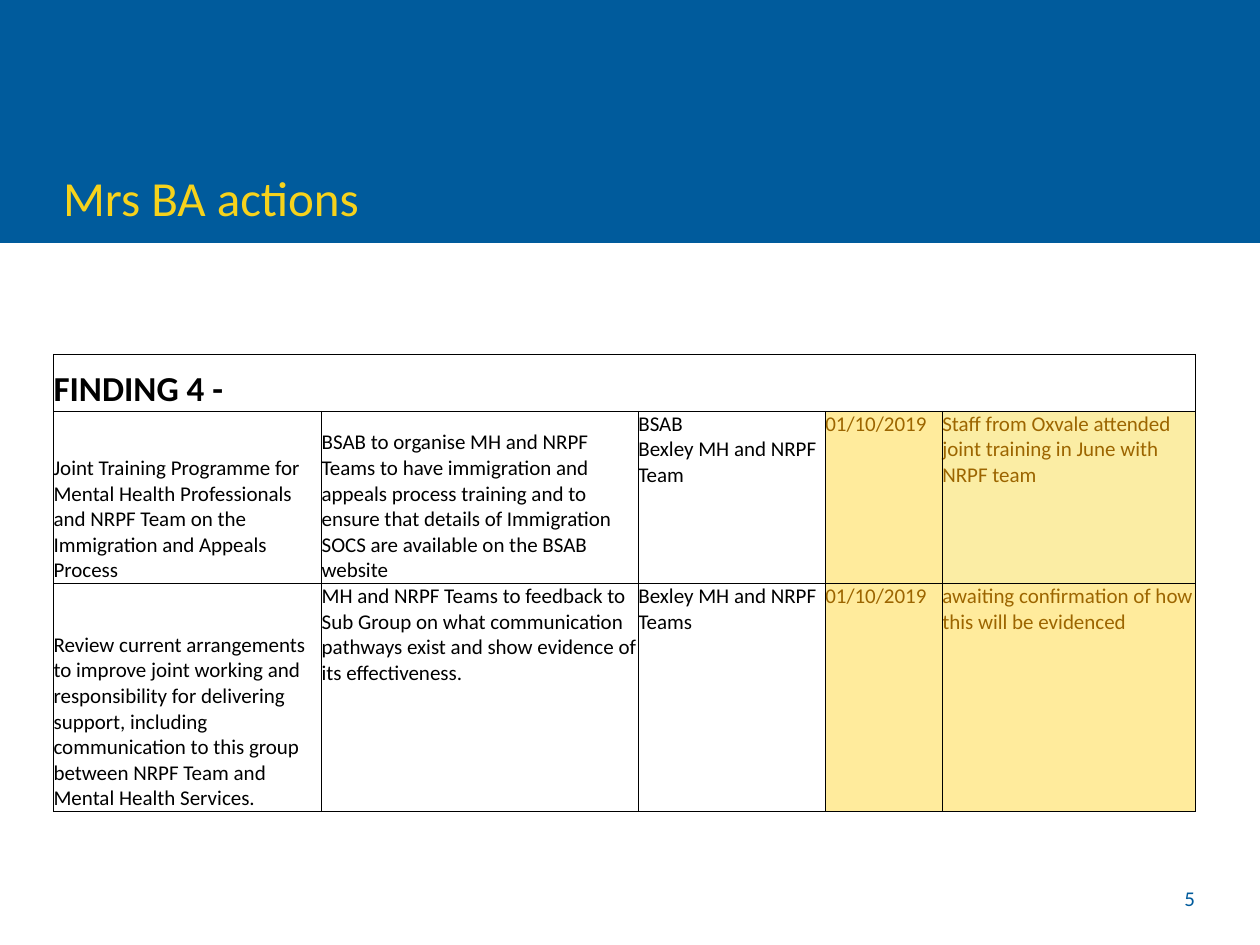
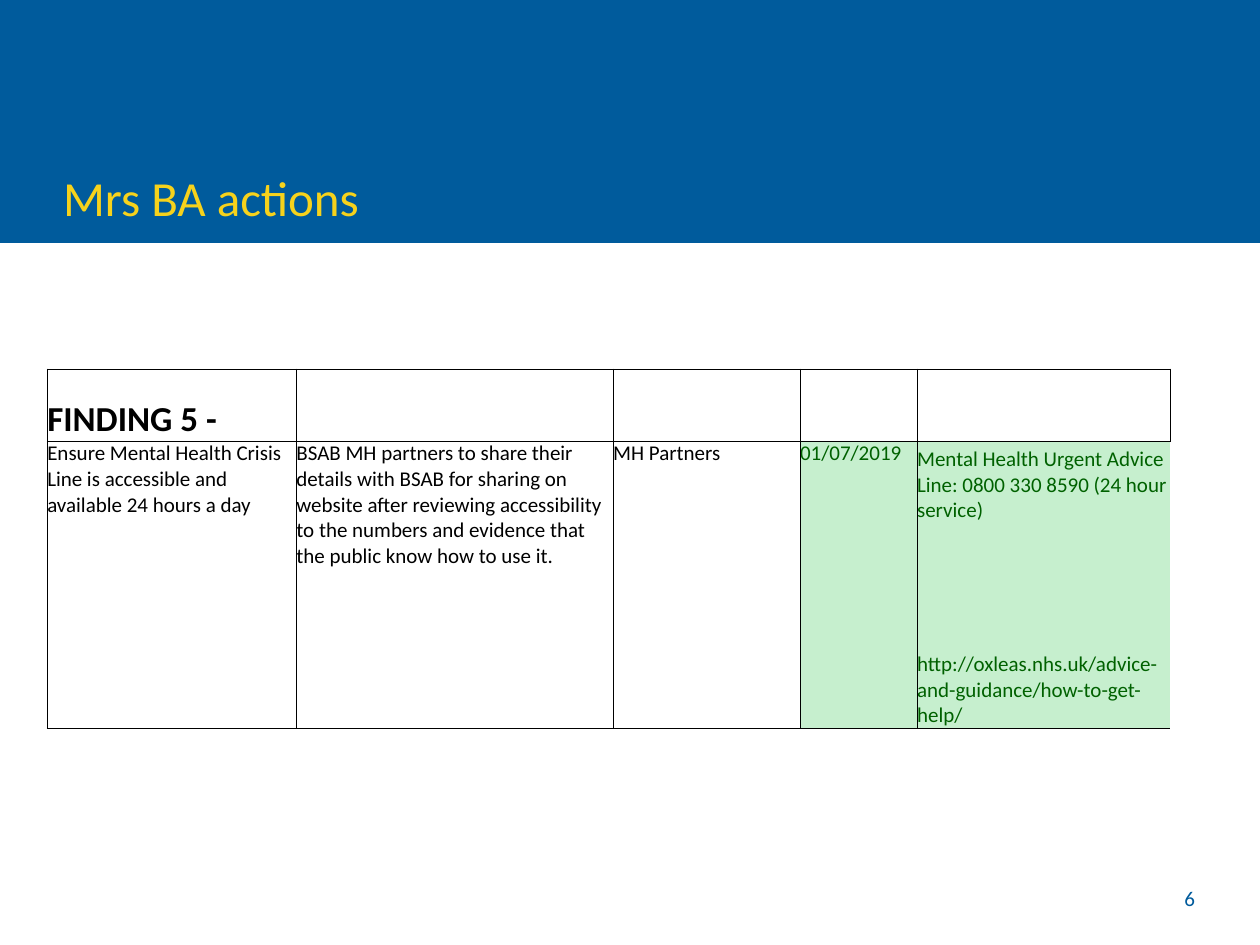
import dataclasses

import lxml.etree
import pptx
import pptx.dml.color
import pptx.enum.shapes
import pptx.enum.text
import pptx.oxml.ns
import pptx.util

Pt = pptx.util.Pt
Anchor = pptx.enum.text.MSO_ANCHOR
Align = pptx.enum.text.PP_ALIGN


@dataclasses.dataclass(frozen=True)
class Theme:
    """Colours, typeface and type sizes of the deck."""
    font: str = "Calibri"
    blue: str = "005B9C"
    yellow: str = "F6D21C"
    black: str = "000000"
    amber_text: str = "9C6500"
    amber_fill: str = "FFEB9C"
    pale_amber_fill: str = "FBEDA4"
    green_text: str = "006100"
    green_fill: str = "C6EFCE"
    title_size: float = 28
    finding_size: float = 20
    body_size: float = 12
    border_width: float = 0.5


THEME = Theme()


@dataclasses.dataclass(frozen=True)
class Entry:
    """One table cell's text and look."""
    text: str = ""
    color: str = THEME.black
    fill: str = ""
    anchor: Anchor = Anchor.TOP
    open_sides: str = ""
    gap: float = 0


@dataclasses.dataclass(frozen=True)
class ActionPlan:
    """The finding and its actions shown on one slide."""
    number: str
    finding: str
    rows: list
    left: float
    top: float
    first_column: float
    row_heights: list
    merge_heading: bool


SLIDE_BOX = (0, 0, 720, 540)
TITLE = "Mrs BA actions"
SHARED_COLUMNS = [181, 106.8, 66.9, 144.6]

PLANS = [
    ActionPlan(
        "5", "FINDING 4 -",
        [
            [
                Entry("Joint Training Programme for Mental Health Professionals and NRPF Team "
                      "on the Immigration and Appeals Process", anchor=Anchor.BOTTOM),
                Entry("BSAB to organise MH and NRPF Teams to have immigration and appeals process "
                      "training and to ensure that details of Immigration SOCS are available on "
                      "the BSAB website", anchor=Anchor.BOTTOM),
                Entry("BSAB\vBexley MH and NRPF Team"),
                Entry("01/10/2019", THEME.amber_text, THEME.amber_fill),
                Entry("Staff from Oxvale attended joint training in June with NRPF team",
                      THEME.amber_text, THEME.pale_amber_fill),
            ],
            [
                Entry("Review current arrangements to improve joint working and responsibility "
                      "for delivering support, including communication to this group between "
                      "NRPF Team and Mental Health Services.", anchor=Anchor.BOTTOM),
                Entry("MH and NRPF Teams to feedback to Sub Group on what communication pathways "
                      "exist and show evidence of its effectiveness."),
                Entry("Bexley MH and NRPF Teams"),
                Entry("01/10/2019", THEME.amber_text, THEME.amber_fill),
                Entry("awaiting confirmation of how this will be evidenced",
                      THEME.amber_text, THEME.amber_fill),
            ],
        ],
        30.6, 202.4, 153.2, [32.6, 98.5, 130.3], True),
    ActionPlan(
        "6", "FINDING 5 -",
        [
            [
                Entry("Ensure Mental Health Crisis Line is accessible and available 24 hours a day"),
                Entry("BSAB MH partners to share their details with BSAB for sharing on website "
                      "after reviewing accessibility to the numbers and evidence that the public "
                      "know how to use it."),
                Entry("MH Partners"),
                Entry("01/07/2019", THEME.green_text, THEME.green_fill),
                Entry("Mental Health Urgent Advice Line: 0800 330 8590 (24 hour service)\n"
                      "http://oxleas.nhs.uk/advice-and-guidance/how-to-get-help/",
                      THEME.green_text, THEME.green_fill, Anchor.BOTTOM, "R", 73.2),
            ],
        ],
        27, 210.8, 142.4, [41.2, 164.2], False),
]


def rgb(value):
    """Turn a hex string into a colour."""
    return pptx.dml.color.RGBColor.from_string(value)


def format_text(text_frame, size, color, bold=False, align=Align.LEFT):
    """Give every run of a text frame the deck's typeface."""
    for paragraph in text_frame.paragraphs:
        paragraph.alignment = align
        for run in paragraph.runs:
            run.font.name = THEME.font
            run.font.size = Pt(size)
            run.font.bold = bold
            run.font.color.rgb = rgb(color)


def clear_margins(target):
    """Remove the inner margins of a text frame or table cell."""
    target.margin_left = target.margin_top = target.margin_right = target.margin_bottom = 0


def add_band(slide, box):
    """Draw the blue band across the box's top, behind the title."""
    left, top, width, _ = box
    band = slide.shapes.add_shape(pptx.enum.shapes.MSO_SHAPE.RECTANGLE,
                                  Pt(left), Pt(top), Pt(width), Pt(138.8))
    band.shadow.inherit = False
    band.fill.solid()
    band.fill.fore_color.rgb = rgb(THEME.blue)
    band.line.fill.background()
    slide.shapes.title.element.addprevious(band.element)


def place_title(slide, box):
    """Set the title at the foot of the band."""
    left, top, _, _ = box
    title = slide.shapes.title
    title.left, title.top, title.width, title.height = map(Pt, (left + 36, top + 95.8, 633, 42.5))
    frame = title.text_frame
    frame.text = TITLE
    frame.word_wrap = True
    frame.vertical_anchor = Anchor.TOP
    clear_margins(frame)
    format_text(frame, THEME.title_size, THEME.yellow)


def add_slide_number(slide, box, number):
    """Set the slide number in the box's lower right corner."""
    left, top, width, height = box
    number_box = slide.shapes.add_textbox(Pt(left + width - 205.2), Pt(top + height - 33.8),
                                          Pt(168), Pt(24))
    frame = number_box.text_frame
    frame.word_wrap = True
    frame.vertical_anchor = Anchor.TOP
    clear_margins(frame)
    frame.text = number
    format_text(frame, THEME.body_size, THEME.blue, align=Align.RIGHT)


def add_borders(cell, open_sides):
    """Rule the cell on all sides but the open ones."""
    properties = cell._tc.get_or_add_tcPr()
    qualify = pptx.oxml.ns.qn
    for index, side in enumerate("LRTB"):
        line = lxml.etree.Element(qualify(f"a:ln{side}"), w=str(Pt(THEME.border_width)))
        if side in open_sides:
            lxml.etree.SubElement(line, qualify("a:noFill"))
        else:
            fill = lxml.etree.SubElement(line, qualify("a:solidFill"))
            lxml.etree.SubElement(fill, qualify("a:srgbClr"), val=THEME.black)
        properties.insert(index, line)


def fill_cell(cell, entry, size, bold):
    """Write and format one table cell."""
    clear_margins(cell)
    cell.vertical_anchor = entry.anchor
    cell.text_frame.text = entry.text
    format_text(cell.text_frame, size, entry.color, bold)
    for paragraph in cell.text_frame.paragraphs[1:]:
        paragraph.space_before = Pt(entry.gap)
    if entry.fill:
        cell.fill.solid()
        cell.fill.fore_color.rgb = rgb(entry.fill)
    else:
        cell.fill.background()
    add_borders(cell, entry.open_sides)


def add_action_table(slide, box, plan):
    """Build the table of a finding and its actions."""
    left, top, _, _ = box
    widths = [plan.first_column, *SHARED_COLUMNS]
    heading = [Entry(plan.finding, anchor=Anchor.BOTTOM)] + [Entry()] * len(SHARED_COLUMNS)
    rows = [heading, *plan.rows]
    table = slide.shapes.add_table(len(rows), len(widths), Pt(left + plan.left),
                                   Pt(top + plan.top), Pt(sum(widths)),
                                   Pt(sum(plan.row_heights))).table
    table.first_row = table.horz_banding = False
    for column, width in zip(table.columns, widths):
        column.width = Pt(width)
    for row, height in zip(table.rows, plan.row_heights):
        row.height = Pt(height)
    for row_index, entries in enumerate(rows):
        is_heading = row_index == 0
        size = THEME.finding_size if is_heading else THEME.body_size
        for column_index, entry in enumerate(entries):
            fill_cell(table.cell(row_index, column_index), entry, size, is_heading)
    if plan.merge_heading:
        table.cell(0, 0).merge(table.cell(0, len(widths) - 1))


def add_action_slide(presentation, box, plan):
    """Add one slide of actions."""
    slide = presentation.slides.add_slide(presentation.slide_layouts[5])
    add_band(slide, box)
    place_title(slide, box)
    add_action_table(slide, box, plan)
    add_slide_number(slide, box, plan.number)


def main():
    """Build and save the presentation."""
    presentation = pptx.Presentation()
    presentation.slide_width, presentation.slide_height = map(Pt, SLIDE_BOX[2:])
    for plan in PLANS:
        add_action_slide(presentation, SLIDE_BOX, plan)
    presentation.save("out.pptx")


if __name__ == "__main__":
    main()
